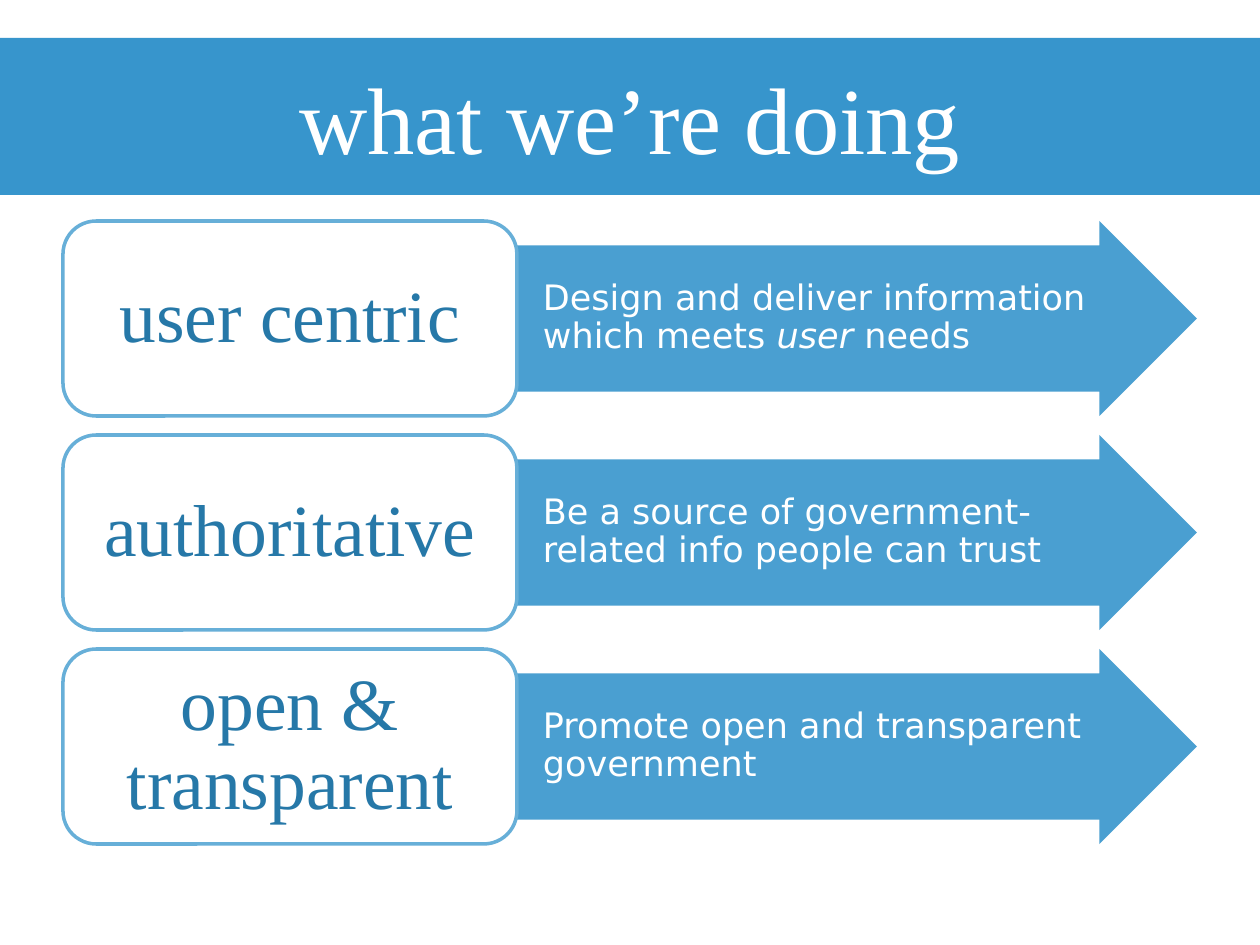
from lxml import etree
from pptx import Presentation
from pptx import util as u
from pptx.dml.color import RGBColor
from pptx.enum import shapes, text
from pptx.oxml.ns import qn

PX = 914400 / 126
SERIF, SANS = "Times New Roman", "DejaVu Sans"
BLUE, PALE, DARK, WHITE = "3795CC", "67AFD8", "2678A8", "FFFFFF"


def px(n):
    return u.Emu(round(n * PX))


def rgb(value):
    return RGBColor.from_string(value)


class Deck:
    def __init__(self, width, height):
        self.prs = Presentation()
        self.prs.slide_width, self.prs.slide_height = px(width), px(height)
        self.s = self.prs.slides.add_slide(self.prs.slide_layouts[6])

    def shape(self, kind, box, adjustments=(), fill=None, alpha=None, line=None):
        sp = self.s.shapes.add_shape(kind, *map(px, box))
        sp.shadow.inherit = False
        for i, value in enumerate(adjustments):
            sp.adjustments[i] = value
        if fill:
            sp.fill.solid()
            sp.fill.fore_color.rgb = rgb(fill)
        else:
            sp.fill.background()
        if alpha:
            color = sp._element.spPr.find(qn("a:solidFill"))[0]
            etree.SubElement(color, qn("a:alpha"), val=str(alpha * 1000))
        if line:
            sp.line.color.rgb = rgb(line)
            sp.line.width = u.Pt(2)
        else:
            sp.line.fill.background()
        return sp

    def set_text(self, sp, runs, insets, font, size, color, align, spacing=1.0):
        """Fill a shape with one paragraph of (wording, italic) runs."""
        tf = sp.text_frame
        tf.word_wrap = True
        tf.vertical_anchor = text.MSO_ANCHOR.MIDDLE
        for side, inset in zip(("left", "top", "right", "bottom"), insets):
            setattr(tf, f"margin_{side}", px(inset))
        p = tf.paragraphs[0]
        p.alignment, p.line_spacing = align, spacing
        for wording, italic in runs:
            r = p.add_run()
            r.text = wording
            style = {"name": font, "size": u.Pt(size), "italic": italic}
            for key, value in style.items():
                setattr(r.font, key, value)
            r.font.color.rgb = rgb(color)

    def title(self, wording):
        sp = self.shape(shapes.MSO_SHAPE.RECTANGLE, (0, 38, 1260, 157), fill=BLUE)
        self.set_text(sp, [(wording, False)], (12, 6, 12, 6), SERIF, 54, WHITE,
                      text.PP_ALIGN.CENTER)

    def arrow(self, box, runs):
        sp = self.shape(shapes.MSO_SHAPE.RIGHT_ARROW, box, (0.75, 0.5),
                        fill=BLUE, alpha=90)
        self.set_text(sp, runs, (26, 2, 1, 2), SANS, 20, WHITE,
                      text.PP_ALIGN.LEFT, 0.9)

    def label(self, box, wording):
        sp = self.shape(shapes.MSO_SHAPE.ROUNDED_RECTANGLE, box, (0.17,), line=PALE)
        self.set_text(sp, [(wording, False)], (22, 10, 22, 10), SERIF, 42, DARK,
                      text.PP_ALIGN.CENTER, 0.9)


def main():
    goals = [
        ("user centric", [("Design and deliver information which meets ", False),
                          ("user", True), (" needs", False)]),
        ("authoritative",
         [("Be a source of government-related info people can trust", False)]),
        ("open & transparent",
         [("Promote open and transparent government", False)]),
    ]
    left, top, height, pitch = 63, 221, 195, 214
    label_width, arrow_width = 454, 680

    deck = Deck(1260, 945)
    deck.title("what we’re doing")
    for i, (name, runs) in enumerate(goals):
        y = top + i * pitch
        deck.arrow((left + label_width, y, arrow_width, height), runs)
        deck.label((left, y, label_width, height), name)
    deck.prs.save("out.pptx")


if __name__ == "__main__":
    main()
